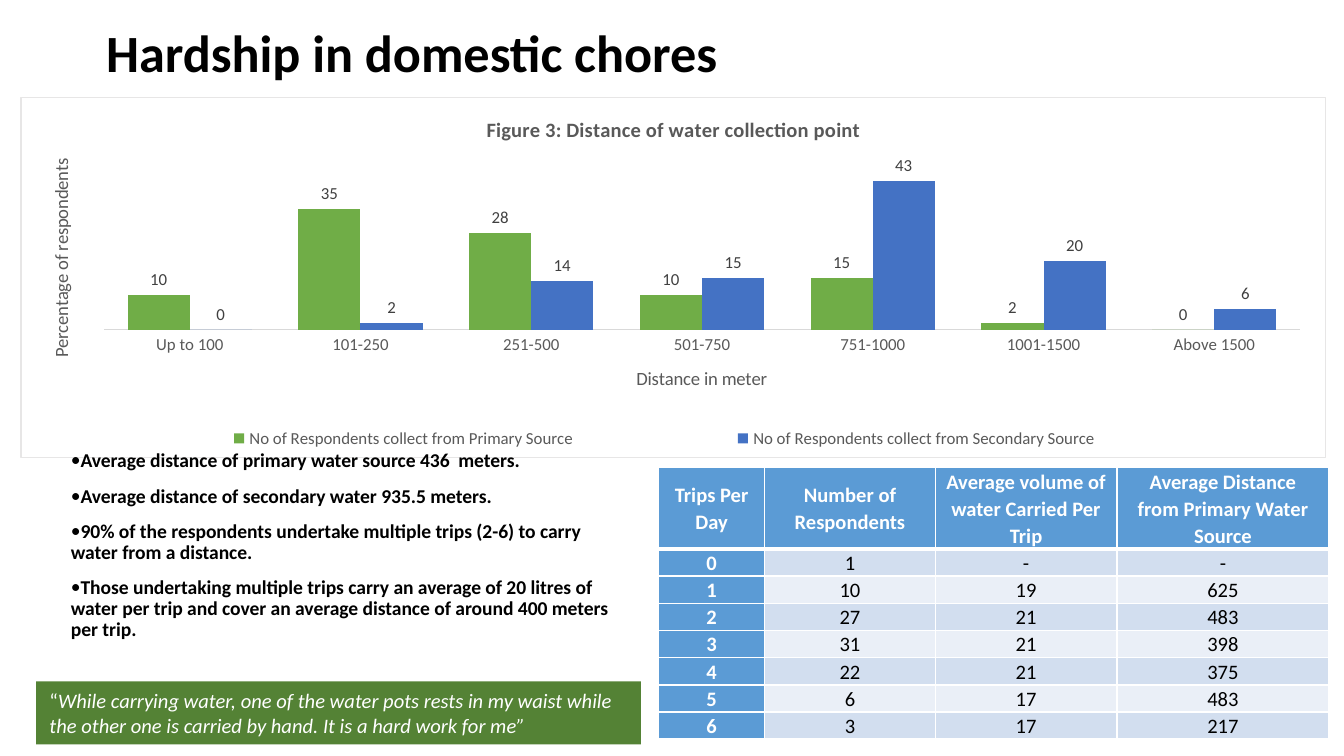
from dataclasses import dataclass

from lxml import etree
from pptx import Presentation
from pptx.chart.data import CategoryChartData
from pptx.dml.color import RGBColor
from pptx.enum.chart import XL_CHART_TYPE, XL_LABEL_POSITION, XL_LEGEND_POSITION, XL_TICK_MARK
from pptx.enum.shapes import MSO_SHAPE
from pptx.enum.text import MSO_ANCHOR, PP_ALIGN
from pptx.oxml.ns import qn
from pptx.util import Inches, Pt

LEFT, CENTER = PP_ALIGN.LEFT, PP_ALIGN.CENTER
TOP, MIDDLE, BOTTOM = MSO_ANCHOR.TOP, MSO_ANCHOR.MIDDLE, MSO_ANCHOR.BOTTOM
CLUSTERED = XL_CHART_TYPE.COLUMN_CLUSTERED
OUTSIDE_END = XL_LABEL_POSITION.OUTSIDE_END
LEGEND_BOTTOM = XL_LEGEND_POSITION.BOTTOM
NO_TICK = XL_TICK_MARK.NONE
RECTANGLE = MSO_SHAPE.RECTANGLE
TITLE_ONLY = 5
SLIDE_WIDTH = 10
SLIDE_HEIGHT = SLIDE_WIDTH * 9 / 16


@dataclass(frozen=True)
class Theme:
    font: str = "Calibri"
    black: str = "000000"
    white: str = "FFFFFF"
    gray: str = "595959"
    label_gray: str = "404040"
    axis_line: str = "D9D9D9"
    chart_border: str = "E7E6E6"
    quote_green: str = "548235"
    header_blue: str = "5B9BD5"
    bands: tuple[str, str] = ("D2DEEF", "EAEFF7")
    title_size: float = 28
    body_size: float = 11
    bullet_size: float = 10.5
    axis_title_size: float = 10
    chart_size: float = 9


@dataclass(frozen=True)
class Box:
    left: float
    top: float
    width: float
    height: float

    def lengths(self):
        return [Inches(n) for n in (self.left, self.top, self.width, self.height)]


@dataclass(frozen=True)
class Series:
    name: str
    values: tuple[int, ...]
    color: str


THEME = Theme()

CATEGORIES = ("Up to 100", "101-250", "251-500", "501-750", "751-1000", "1001-1500", "Above 1500")
SERIES = (
    Series("No of Respondents collect from Primary Source", (10, 35, 28, 10, 15, 2, 0), "70AD47"),
    Series("No of Respondents collect from Secondary Source", (0, 2, 14, 15, 43, 20, 6), "4472C4"),
)
BULLETS = (
    "Average distance of primary water source 436  meters.",
    "Average distance of secondary water 935.5 meters.",
    "90% of the respondents undertake multiple trips (2-6) to carry water from a distance.",
    "Those undertaking multiple trips carry an average of 20 litres of water per trip "
    "and cover an average distance of around 400 meters per trip.",
)
QUOTE = ("While carrying water, one of the water pots rests in my waist while the other one "
         "is carried by hand. It is a hard work for me”")
COLUMN_WIDTHS = (0.79, 1.27, 1.35, 1.58)
TRIPS = (
    ("Trips Per Day", "Number of Respondents", "Average volume of water Carried Per Trip",
     "Average Distance from Primary Water Source"),
    ("0", "1", "-", "-"),
    ("1", "10", "19", "625"),
    ("2", "27", "21", "483"),
    ("3", "31", "21", "398"),
    ("4", "22", "21", "375"),
    ("5", "6", "17", "483"),
    ("6", "3", "17", "217"),
)


def format_font(font, size: float, color: str, bold: bool = False, italic: bool = False) -> None:
    font.name, font.size = THEME.font, Pt(size)
    font.bold, font.italic = bold, italic
    font.color.rgb = RGBColor.from_string(color)


def write_text(paragraph, text: str, *, size: float, color: str, bold: bool = False,
               italic: bool = False, align=LEFT, spacing: float = 1.0) -> None:
    paragraph.alignment = align
    paragraph.line_spacing = spacing
    run = paragraph.add_run()
    run.text = text
    format_font(run.font, size, color, bold, italic)


def set_layout(element, **percents: float) -> None:
    """Place a chart part by percentages of the chart's size."""
    old_layout = element.find(qn("c:layout"))
    if old_layout is not None:
        element.remove(old_layout)
    layout = etree.Element(qn("c:layout"))
    manual = etree.SubElement(layout, qn("c:manualLayout"))
    overlay = element.find(qn("c:overlay"))
    if overlay is None:
        etree.SubElement(manual, qn("c:layoutTarget")).set("val", "inner")
        element.insert(0, layout)
    else:
        overlay.addprevious(layout)
    for axis in ("x", "y"):
        etree.SubElement(manual, qn(f"c:{axis}Mode")).set("val", "edge")
    for name, value in percents.items():
        etree.SubElement(manual, qn(f"c:{name}")).set("val", f"{value / 100:.3f}")


def add_line(parent, tag: str, color: str, width: float) -> None:
    line = etree.SubElement(parent, qn(tag), w=str(Pt(width)))
    fill = etree.SubElement(line, qn("a:solidFill"))
    etree.SubElement(fill, qn("a:srgbClr"), val=color)


def add_distance_chart(slide, box: Box) -> None:
    data = CategoryChartData()
    data.categories = CATEGORIES
    for series in SERIES:
        data.add_series(series.name, series.values)
    chart = slide.shapes.add_chart(CLUSTERED, *box.lengths(), data).chart
    format_font(chart.font, THEME.chart_size, THEME.gray)

    # Columns and their values
    plot = chart.plots[0]
    plot.gap_width, plot.overlap, plot.vary_by_categories = 75, 0, False
    for column, series in zip(plot.series, SERIES):
        column.format.fill.solid()
        column.format.fill.fore_color.rgb = RGBColor.from_string(series.color)
        labels = column.data_labels
        labels.show_value, labels.position = True, OUTSIDE_END
        format_font(labels.font, THEME.chart_size, THEME.label_gray)

    # Axes
    category_axis, value_axis = chart.category_axis, chart.value_axis
    category_axis.major_tick_mark = NO_TICK
    category_axis.format.line.color.rgb = RGBColor.from_string(THEME.axis_line)
    category_axis.format.line.width = Pt(0.75)
    format_font(category_axis.tick_labels.font, THEME.chart_size, THEME.gray)
    value_axis.minimum_scale, value_axis.maximum_scale = 0, 50
    value_axis.has_major_gridlines = False
    value_axis.visible = False

    # Titles
    for title, text, size, bold, x, y in (
        (chart.chart_title, "Figure 3: Distance of water collection point",
         THEME.body_size, True, 35.4, 4.1),
        (category_axis.axis_title, "Distance in meter", THEME.axis_title_size, False, 46.9, 73.9),
        (value_axis.axis_title, "Percentage of respondents",
         THEME.axis_title_size, False, 1.9, 16.2),
    ):
        write_text(title.text_frame.paragraphs[0], text, size=size, color=THEME.gray,
                   bold=bold, align=CENTER)
        set_layout(title.element, x=x, y=y)
    body = value_axis.axis_title.element.find(".//" + qn("a:bodyPr"))
    body.set("rot", "-5400000")
    body.set("vert", "horz")

    # Legend, plot area and border
    chart.has_legend = True
    chart.legend.position, chart.legend.include_in_layout = LEGEND_BOTTOM, False
    format_font(chart.legend.font, THEME.chart_size, THEME.gray)
    chart_part = chart.element.find(qn("c:chart"))
    set_layout(chart_part.find(qn("c:legend")), x=4.1, y=90.2, w=90.4, h=9)
    set_layout(chart_part.find(qn("c:plotArea")), x=6.4, y=16.6, w=91.6, h=47.9)
    border = etree.Element(qn("c:spPr"))
    etree.SubElement(border, qn("a:noFill"))
    add_line(border, "a:ln", THEME.chart_border, 0.75)
    chart_part.addnext(border)


def add_trips_table(slide, box: Box) -> None:
    frame = slide.shapes.add_table(len(TRIPS), len(COLUMN_WIDTHS), *box.lengths())
    table = frame.table
    for column, width in zip(table.columns, COLUMN_WIDTHS):
        column.width = Inches(width)
    for i, values in enumerate(TRIPS):
        table.rows[i].height = Inches(0.15 if i else 0.44)
        for j, text in enumerate(values):
            heading = i == 0 or j == 0
            cell = table.cell(i, j)
            cell.margin_left = cell.margin_right = Inches(0.08)
            cell.margin_top = cell.margin_bottom = 0
            cell.vertical_anchor = MIDDLE
            properties = cell._tc.get_or_add_tcPr()
            for side in "LRTB":
                thick = (i == 0 and side == "B") or (i == 1 and side == "T")
                add_line(properties, f"a:ln{side}", THEME.white, 3 if thick else 1)
            cell.fill.solid()
            fill = THEME.header_blue if heading else THEME.bands[(i - 1) % 2]
            cell.fill.fore_color.rgb = RGBColor.from_string(fill)
            write_text(cell.text_frame.paragraphs[0], text, size=THEME.body_size, bold=heading,
                       color=THEME.white if heading else THEME.black, align=CENTER, spacing=1.07)
    frame.height = Inches(box.height)


def add_bullets(slide, box: Box) -> None:
    frame = slide.shapes.add_textbox(*box.lengths()).text_frame
    frame.word_wrap, frame.vertical_anchor = True, BOTTOM
    frame.margin_right = Inches(0.05)
    for i, text in enumerate(BULLETS):
        paragraph = frame.add_paragraph() if i else frame.paragraphs[0]
        properties = paragraph._p.get_or_add_pPr()
        properties.set("marL", "0")
        properties.set("indent", "0")
        etree.SubElement(properties, qn("a:buFont"), typeface=THEME.font)
        etree.SubElement(properties, qn("a:buChar"), char="•")
        paragraph.space_before = Pt(7.5 if i else 0)
        write_text(paragraph, text, size=THEME.bullet_size, color=THEME.black,
                   bold=True, spacing=0.9)


def add_quote(slide, box: Box) -> None:
    shape = slide.shapes.add_shape(RECTANGLE, *box.lengths())
    shape.shadow.inherit = False
    shape.fill.solid()
    shape.fill.fore_color.rgb = RGBColor.from_string(THEME.quote_green)
    shape.line.fill.background()
    frame = shape.text_frame
    frame.word_wrap, frame.vertical_anchor = True, TOP
    for text, italic in (("“", False), (QUOTE, True)):
        write_text(frame.paragraphs[0], text, size=THEME.body_size, color=THEME.white, italic=italic)


def main() -> None:
    presentation = Presentation()
    presentation.slide_width = Inches(SLIDE_WIDTH)
    presentation.slide_height = Inches(SLIDE_HEIGHT)
    slide = presentation.slides.add_slide(presentation.slide_layouts[TITLE_ONLY])

    # Title
    title = slide.shapes.title
    title.left, title.top, title.width, title.height = Box(0.69, 0.11, 8.62, 0.61).lengths()
    title.text_frame.vertical_anchor = MIDDLE
    write_text(title.text_frame.paragraphs[0], "Hardship in domestic chores",
               size=THEME.title_size, color=THEME.black, bold=True, spacing=0.9)

    # Evidence and findings
    add_distance_chart(slide, Box(0.15, 0.72, 9.72, 2.69))
    add_trips_table(slide, Box(4.9, 3.48, 4.99, 1.96))
    add_bullets(slide, Box(0.43, 3.55, 4.2, 1.27))
    add_quote(slide, Box(0.27, 5.07, 4.5, 0.47))
    presentation.save("out.pptx")


if __name__ == "__main__":
    main()
